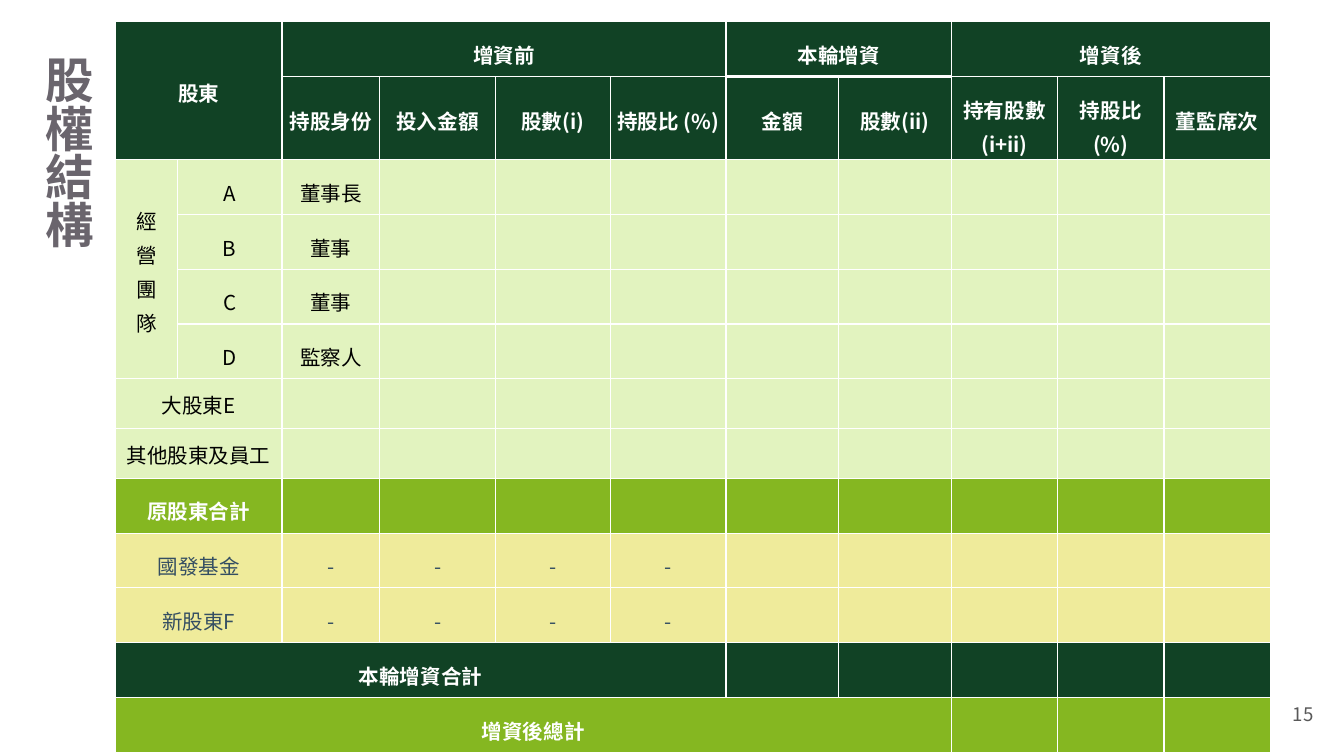
from dataclasses import dataclass

from lxml import etree
from pptx import Presentation
from pptx.dml.color import RGBColor
from pptx.enum.text import MSO_ANCHOR, MSO_AUTO_SIZE, PP_ALIGN
from pptx.oxml.ns import qn
from pptx.util import Cm, Pt

MIDDLE, TOP = MSO_ANCHOR.MIDDLE, MSO_ANCHOR.TOP
CENTER, LEFT, RIGHT = PP_ALIGN.CENTER, PP_ALIGN.LEFT, PP_ALIGN.RIGHT
GROW = MSO_AUTO_SIZE.SHAPE_TO_FIT_TEXT

WHITE = RGBColor(0xFF, 0xFF, 0xFF)
BLACK = RGBColor(0x00, 0x00, 0x00)
DARK_GREEN = RGBColor(0x11, 0x42, 0x25)
PALE_GREEN = RGBColor(0xE2, 0xF3, 0xBF)
LIME = RGBColor(0x85, 0xB7, 0x21)
YELLOW = RGBColor(0xEF, 0xEB, 0x9B)
SLATE = RGBColor(0x34, 0x4E, 0x62)
TITLE_GRAY = RGBColor(0x6A, 0x65, 0x6D)
PAGE_GRAY = RGBColor(0x59, 0x59, 0x59)

FONT = "Noto Sans CJK SC"
THIN, THICK = Pt(0.68), Pt(2.05)
COL_WIDTHS = [1.17, 1.98, 1.85, 2.18, 2.18, 2.18, 2.13, 2.13, 2.01, 2.01, 2.01]
ROW_HEIGHT, HEADER_HEIGHT = 0.94, 1.47


@dataclass(frozen=True)
class RowStyle:
    fill: RGBColor
    color: RGBColor
    bold: bool = False
    margin_x: float = 0.08
    margin_top: float = 0.25
    margin_bottom: float = 0.25
    spacing: float = 1.15


@dataclass(frozen=True)
class Row:
    style: RowStyle
    texts: dict[int, str]
    spans: dict[int, tuple[int, int]]


HEADER = RowStyle(DARK_GREEN, WHITE, True)
TEAM = RowStyle(PALE_GREEN, BLACK)
HOLDER = RowStyle(PALE_GREEN, BLACK, False, 0.03, 0.03, 0, 1)
TOTAL = RowStyle(LIME, WHITE, True)
INVESTOR = RowStyle(YELLOW, SLATE)
PAIR = {0: (1, 2)}
DASHES = dict.fromkeys(range(2, 6), "-")

ROWS = [
    Row(HEADER, {0: "股東", 2: "增資前", 6: "本輪增資", 8: "增資後"},
        {0: (2, 2), 2: (1, 4), 6: (1, 2), 8: (1, 3)}),
    Row(HEADER, {2: "持股身份", 3: "投入金額", 4: "股數(i)", 5: "持股比 (%)",
                 6: "金額", 7: "股數(ii)", 8: "持有股數\n(i+ii)",
                 9: "持股比\n(%)", 10: "董監席次"}, {}),
    Row(TEAM, {0: "經\n營\n團\n隊", 1: "A", 2: "董事長"}, {0: (4, 1)}),
    Row(TEAM, {1: "B", 2: "董事"}, {}),
    Row(TEAM, {1: "C", 2: "董事"}, {}),
    Row(TEAM, {1: "D", 2: "監察人"}, {}),
    Row(HOLDER, {0: "大股東E"}, PAIR),
    Row(HOLDER, {0: "其他股東及員工"}, PAIR),
    Row(TOTAL, {0: "原股東合計"}, PAIR),
    Row(INVESTOR, {0: "國發基金"} | DASHES, PAIR),
    Row(INVESTOR, {0: "新股東F"} | DASHES, PAIR),
    Row(HEADER, {0: "本輪增資合計"}, {0: (1, 6)}),
    Row(TOTAL, {0: "增資後總計"}, {0: (1, 8)}),
]


def write(tf, text: str, size: float, color: RGBColor, bold: bool,
          align: PP_ALIGN, spacing: float | None = None) -> None:
    tf.text = text
    for p in tf.paragraphs:
        p.alignment = align
        if spacing:
            p.line_spacing = spacing
        for r in p.runs:
            r.font.size = Pt(size)
            r.font.bold = bold
            r.font.name = FONT
            r.font.color.rgb = color
            etree.SubElement(r.font._element, qn("a:ea"), typeface=FONT)


def add_text(s, left: float, top: float, width: float, height: float,
             inset: float, anchor: MSO_ANCHOR):
    tf = s.shapes.add_textbox(Cm(left), Cm(top), Cm(width), Cm(height)).text_frame
    tf.word_wrap = True
    tf.vertical_anchor = anchor
    tf.margin_left = tf.margin_right = Cm(inset)
    tf.margin_top = tf.margin_bottom = Cm(inset)
    return tf


def set_borders(cell, top: int, bottom: int) -> None:
    tcPr = cell._tc.get_or_add_tcPr()
    widths = {"a:lnL": THIN, "a:lnR": THIN, "a:lnT": top, "a:lnB": bottom}
    for i, (tag, width) in enumerate(widths.items()):
        ln = etree.Element(qn(tag), w=str(int(width)))
        fill = etree.SubElement(ln, qn("a:solidFill"))
        etree.SubElement(fill, qn("a:srgbClr"), val=str(WHITE))
        tcPr.insert(i, ln)


def fill_cell(cell, text: str, style: RowStyle) -> None:
    cell.fill.solid()
    cell.fill.fore_color.rgb = style.fill
    if not text:
        p = cell.text_frame.paragraphs[0]
        etree.SubElement(p._p, qn("a:endParaRPr"), sz="1400")
        return
    cell.vertical_anchor = MIDDLE
    cell.margin_left = cell.margin_right = Cm(style.margin_x)
    cell.margin_top = Cm(style.margin_top)
    cell.margin_bottom = Cm(style.margin_bottom)
    write(cell.text_frame, text, 11, style.color, style.bold, CENTER, style.spacing)


def add_equity_table(s) -> None:
    heights = [HEADER_HEIGHT if i == 1 else ROW_HEIGHT for i in range(len(ROWS))]
    table = s.shapes.add_table(len(ROWS), len(COL_WIDTHS), Cm(2.18), Cm(0.41),
                               Cm(sum(COL_WIDTHS)), Cm(sum(heights))).table
    table.first_row = table.horz_banding = False
    for column, width in zip(table.columns, COL_WIDTHS):
        column.width = Cm(width)
    for i, (row, height) in enumerate(zip(ROWS, heights)):
        table.rows[i].height = Cm(height)
        for j in range(len(COL_WIDTHS)):
            cell = table.cell(i, j)
            fill_cell(cell, row.texts.get(j, ""), row.style)
            in_round = j in (6, 7)
            set_borders(cell, THICK if in_round and i == 1 else THIN,
                        THICK if in_round and i == 0 else THIN)
    for i, row in enumerate(ROWS):
        for j, (down, across) in row.spans.items():
            table.cell(i, j).merge(table.cell(i + down - 1, j + across - 1))


def main() -> None:
    prs = Presentation()
    prs.slide_width, prs.slide_height = Cm(25.4), Cm(14.29)
    s = prs.slides.add_slide(prs.slide_layouts[6])
    page = add_text(s, 23.55, 12.95, 1.52, 1.09, 0.25, MIDDLE)
    write(page, "15", 10, PAGE_GRAY, False, RIGHT)
    title = add_text(s, 0.86, 1.14, 1.32, 4.45, 0, TOP)
    title.auto_size = GROW
    write(title, "股\n權\n結\n構", 26, TITLE_GRAY, True, LEFT, 0.83)
    add_equity_table(s)
    prs.save("out.pptx")


if __name__ == "__main__":
    main()
